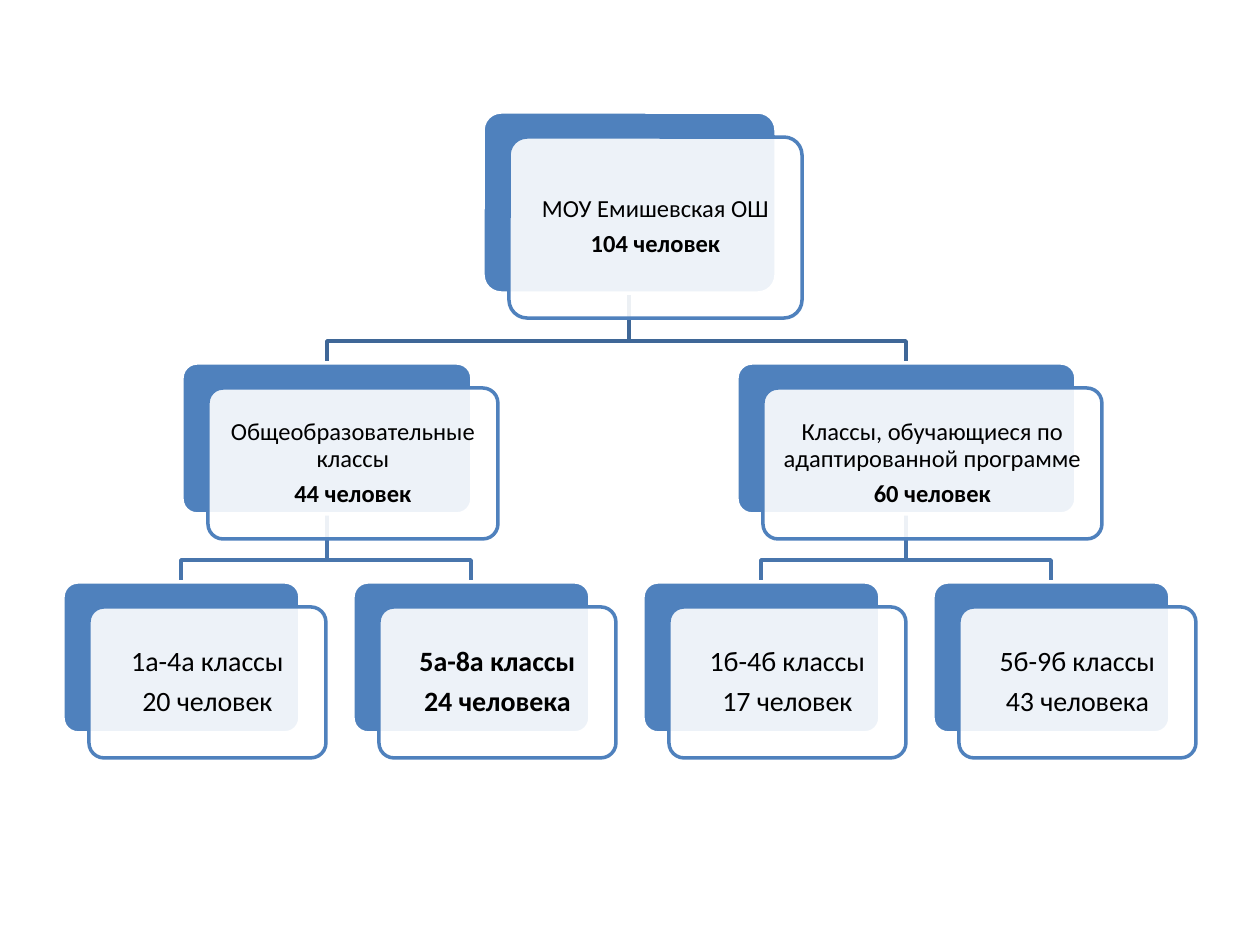
"""Build a slide with the class structure of a school as a tree of cards."""
from dataclasses import dataclass

from lxml.etree import SubElement
from pptx import Presentation
from pptx.dml.color import RGBColor
from pptx.enum.shapes import MSO_SHAPE as Preset
from pptx.enum.text import MSO_ANCHOR as Anchor, PP_ALIGN as Align
from pptx.oxml.ns import qn
from pptx.util import Emu, Pt

SCALE = 914400 / 126
OFFSET_X, OFFSET_Y = 26, 25
BEND = 22
BLUE, WHITE, BLACK = "4F81BD", "FFFFFF", "000000"


@dataclass(frozen=True)
class Level:
    """Format shared by the cards of one row."""

    top: int
    height: int
    size: int
    inset: int
    line: str = BLUE


@dataclass(frozen=True)
class Card:
    """One card with a caption and a head count."""

    level: Level
    left: int
    width: int
    caption: str
    count: str
    bold: tuple[bool, bool] = (False, True)
    children: tuple["Card", ...] = ()

    @property
    def center(self) -> int:
        """Return the horizontal middle of the card."""
        return self.left + self.width // 2


def px(value: int) -> Emu:
    """Turn pixels into EMU."""
    return Emu(round(value * SCALE))


def color(value: str) -> RGBColor:
    """Turn a hex string into a colour."""
    return RGBColor.from_string(value)


def add_text(frame, text: str, *, size: int, bold: bool, first: bool) -> None:
    """Write one centred paragraph into a text frame."""
    paragraph = frame.paragraphs[0] if first else frame.add_paragraph()
    paragraph.alignment = Align.CENTER
    paragraph.line_spacing = 0.9
    paragraph.space_after = Pt(size * 0.35)
    run = paragraph.add_run()
    run.text = text
    run.font.name = "Calibri"
    run.font.size = Pt(size)
    run.font.bold = bold
    run.font.color.rgb = color(BLACK)


def add_panel(slide, left: int, top: int, width: int, height: int, *,
              fill: str, line: str, opacity: int = 100):
    """Draw a rounded rectangle, with its opacity in percent."""
    shape = slide.shapes.add_shape(
        Preset.ROUNDED_RECTANGLE, px(left), px(top), px(width), px(height))
    shape.adjustments[0] = 0.1
    shape.shadow.inherit = False
    shape.fill.solid()
    shape.fill.fore_color.rgb = color(fill)
    shape.line.color.rgb = color(line)
    shape.line.width = Pt(2)
    if opacity < 100:
        fill_color = shape.fill._xPr.find(qn("a:solidFill"))[0]
        SubElement(fill_color, qn("a:alpha"), val=str(opacity * 1000))
    return shape


def add_branch(slide, parent: Card, child: Card) -> None:
    """Draw the elbow line from a card to one of its children."""
    start = parent.level.top + parent.level.height
    end = child.level.top
    builder = slide.shapes.build_freeform(parent.center, start, scale=SCALE)
    builder.add_line_segments(
        [(parent.center, end - BEND), (child.center, end - BEND),
         (child.center, end)], close=False)
    shape = builder.convert_to_shape()
    shape.shadow.inherit = False
    shape.fill.background()
    shape.line.color.rgb = color(parent.level.line)
    shape.line.width = Pt(2)


def add_branches(slide, card: Card) -> None:
    """Draw all the lines below a card."""
    for child in card.children:
        add_branches(slide, child)
        add_branch(slide, card, child)


def add_cards(slide, card: Card) -> None:
    """Draw a card and all the cards below it."""
    level = card.level
    add_panel(slide, card.left, level.top, card.width, level.height,
              fill=BLUE, line=WHITE)
    front = add_panel(slide, card.left + OFFSET_X, level.top + OFFSET_Y,
                      card.width, level.height,
                      fill=WHITE, line=BLUE, opacity=90)
    frame = front.text_frame
    frame.word_wrap = True
    frame.vertical_anchor = Anchor.MIDDLE
    frame.margin_left = frame.margin_right = px(level.inset)
    frame.margin_top = frame.margin_bottom = px(level.inset)
    for index, text in enumerate((card.caption, card.count)):
        add_text(frame, text, size=level.size, bold=card.bold[index],
                 first=index == 0)
    for child in card.children:
        add_cards(slide, child)


SCHOOL = Level(112, 181, 14, 7, "3F6797")
PROGRAM = Level(363, 151, 14, 7, "4875AC")
GRADES = Level(582, 151, 16, 8)


def grades(column: int, caption: str, count: str, bold: bool = False) -> Card:
    """Return a card of the bottom row in the given column."""
    return Card(GRADES, 63 + 290 * column, 237, caption, count, (bold, bold))


TREE = Card(SCHOOL, 483, 293, "МОУ Емишевская ОШ", "104 человек", children=(
    Card(PROGRAM, 182, 290, "Общеобразовательные классы", "44 человек",
         children=(grades(0, "1а-4а классы", "20 человек"),
                   grades(1, "5а-8а классы", "24 человека", bold=True))),
    Card(PROGRAM, 737, 339, "Классы, обучающиеся по адаптированной программе",
         "60 человек",
         children=(grades(2, "1б-4б классы", "17 человек"),
                   grades(3, "5б-9б классы", "43 человека"))),
))


def main() -> None:
    """Build and save the presentation."""
    presentation = Presentation()
    presentation.slide_width, presentation.slide_height = px(1260), px(945)
    slide = presentation.slides.add_slide(presentation.slide_layouts[6])
    add_branches(slide, TREE)
    add_cards(slide, TREE)
    presentation.save("out.pptx")


if __name__ == "__main__":
    main()
